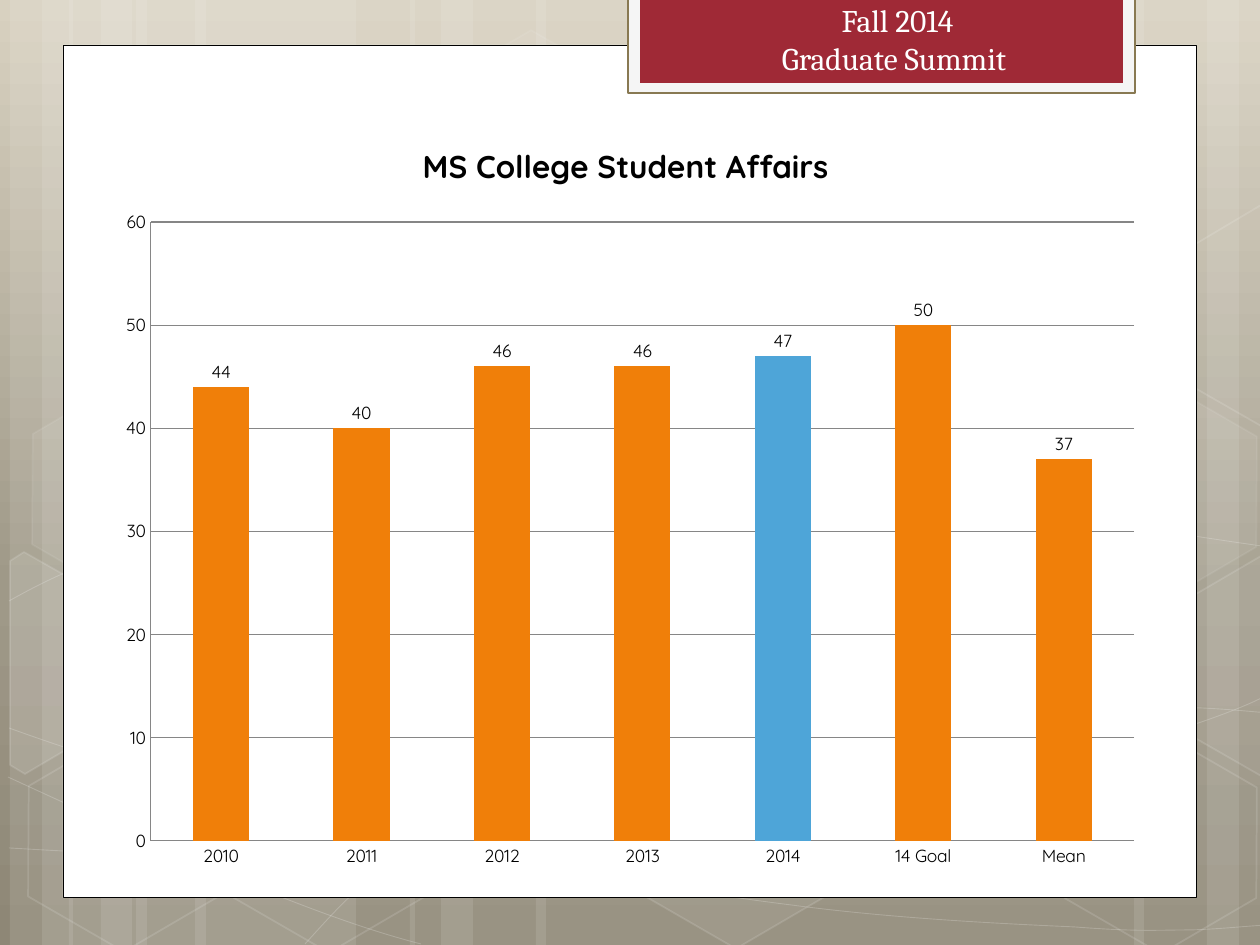
from copy import deepcopy
from typing import NamedTuple, Optional

from lxml import etree
from pptx import Presentation
from pptx import util as u
from pptx.chart import data
from pptx.dml.color import RGBColor
from pptx.enum import chart as ch
from pptx.enum import shapes, text
from pptx.oxml import ns

PX = 914400 / 126
WIDTH, HEIGHT = 1260, 945

WHITE = RGBColor(0xFF, 0xFF, 0xFF)
BLACK = RGBColor(0x00, 0x00, 0x00)
PLATE = RGBColor(0xF5, 0xF5, 0xF5)
PLATE_EDGE = RGBColor(0x88, 0x79, 0x52)
CRIMSON = RGBColor(0x9F, 0x29, 0x36)
ORANGE = RGBColor(0xF0, 0x7F, 0x09)
BLUE = RGBColor(0x4E, 0xA5, 0xD8)
GREY = RGBColor(0x86, 0x86, 0x86)
BACKDROP = [
    (0, RGBColor(0xD8, 0xD1, 0xC0)),
    (0.62, RGBColor(0x9F, 0x99, 0x88)),
    (1, RGBColor(0x8E, 0x87, 0x76)),
]


class Box(NamedTuple):
    left: int
    top: int
    width: int
    height: int


class Style(NamedTuple):
    fill: Optional[RGBColor] = None
    fill_alpha: int = 100
    line: Optional[RGBColor] = None
    line_pt: float = 1
    line_alpha: int = 100


class Hexagon(NamedTuple):
    left: int
    top: int
    fill_alpha: int
    line_alpha: int


class Shard(NamedTuple):
    points: list
    fill_alpha: int


STRIPES = [
    (136, 220), (10, 63), (42, 105), (195, 220), (69, 63), (101, 105),
    (924, 220), (1207, 63), (1134, 105), (536, 388), (410, 63), (441, 105),
]
CURVES = [
    [(9, 848), (77, 852), (145, 856), (239, 854), (334, 853), (451, 850), (577, 838),
     (703, 825), (882, 801), (998, 777), (1113, 753), (1231, 716), (1269, 694)],
    [(9, 601), (45, 581), (82, 562), (152, 543), (224, 524), (326, 499), (437, 488),
     (549, 478), (685, 478), (824, 488), (963, 498), (1193, 537), (1269, 547)],
    [(8, 777), (160, 847), (311, 916), (421, 944)],
    [(9, 728), (48, 742), (88, 756), (161, 776), (234, 795), (344, 827), (450, 848),
     (554, 869), (687, 892), (791, 905), (896, 919), (1008, 924), (1075, 927),
     (1140, 932), (1158, 930), (1191, 930), (1223, 929), (1246, 926), (1269, 925)],
    [(305, 944), (328, 919), (350, 893), (381, 871), (411, 848), (454, 823), (489, 805),
     (524, 788), (546, 780), (592, 767), (638, 754), (722, 737), (766, 728),
     (811, 719), (818, 719), (857, 717), (896, 713), (958, 709), (1000, 708),
     (1045, 707), (1116, 708), (1116, 708), (1144, 708), (1173, 708), (1201, 708),
     (1223, 709), (1245, 711), (1256, 712), (1268, 713), (1264, 712), (1268, 713)],
]
HEXAGONS = [
    Hexagon(421, 45, 4, 8),
    Hexagon(626, 742, 6, 12),
    Hexagon(14, 745, 0, 12),
    Hexagon(18, 393, 7, 8),
    Hexagon(219, 746, 0, 12),
    Hexagon(1051, 747, 0, 12),
    Hexagon(1051, 396, 7, 8),
]
SHARDS = [
    Shard([(10, 561), (24, 552), (121, 607), (120, 718), (25, 774), (10, 765)], 10),
    Shard([(1167, 611), (1261, 556), (1271, 562), (1271, 772), (1263, 777), (1167, 722)], 4),
    Shard([(1167, 261), (1261, 205), (1273, 212), (1271, 422), (1263, 427), (1167, 372)], 0),
]


def emu(px: float) -> int:
    return round(px * PX)


def place(box: Box) -> list:
    return [emu(length) for length in box]


def set_alpha(shape, fill_path: str, percent: int) -> None:
    if percent < 100:
        color = shape._element.spPr.xpath(f"{fill_path}/a:srgbClr")[0]
        etree.SubElement(color, ns.qn("a:alpha")).set("val", str(percent * 1000))


def apply_style(shape, style: Style) -> None:
    shape.shadow.inherit = False
    if style.fill is not None and style.fill_alpha:
        shape.fill.solid()
        shape.fill.fore_color.rgb = style.fill
        set_alpha(shape, "./a:solidFill", style.fill_alpha)
    else:
        shape.fill.background()
    if style.line is None:
        shape.line.fill.background()
    else:
        shape.line.color.rgb = style.line
        shape.line.width = u.Pt(style.line_pt)
        set_alpha(shape, "./a:ln/a:solidFill", style.line_alpha)


def add_rect(slide, box: Box, style: Style) -> None:
    rect = slide.shapes.add_shape(shapes.MSO_SHAPE.RECTANGLE, *place(box))
    apply_style(rect, style)


def add_hexagon(slide, spec_: Hexagon) -> None:
    box = Box(spec_.left, spec_.top, 220, 192)
    hexagon = slide.shapes.add_shape(shapes.MSO_SHAPE.HEXAGON, *place(box))
    hexagon.adjustments[0] = 0.285
    hexagon.rotation = 30
    apply_style(hexagon, Style(WHITE, spec_.fill_alpha, WHITE, 1, spec_.line_alpha))


def add_outline(slide, points: list, style: Style, close: bool):
    builder = slide.shapes.build_freeform(*points[0], scale=PX)
    builder.add_line_segments(points[1:], close=close)
    outline = builder.convert_to_shape()
    apply_style(outline, style)
    return outline


def add_curve(slide, points: list) -> None:
    curve = add_outline(slide, points, Style(line=WHITE, line_pt=0.5, line_alpha=20), False)
    segments = curve._element.spPr.xpath(".//a:lnTo")
    for first, second, third in zip(*[iter(segments)] * 3):
        first.tag = ns.qn("a:cubicBezTo")
        for segment in (second, third):
            first.append(segment[0])
            segment.getparent().remove(segment)


def add_text(slide, box: Box, lines: list, *, size: int, font: str, color: RGBColor) -> None:
    frame = slide.shapes.add_textbox(*place(box)).text_frame
    frame.word_wrap = True
    frame.auto_size = text.MSO_AUTO_SIZE.SHAPE_TO_FIT_TEXT
    for index, line in enumerate(lines):
        paragraph = frame.paragraphs[0] if index == 0 else frame.add_paragraph()
        paragraph.alignment = text.PP_ALIGN.CENTER
        run = paragraph.add_run()
        run.text = line
        run.font.size, run.font.name = u.Pt(size), font
        run.font.color.rgb = color


def paint_backdrop(slide) -> None:
    fill = slide.background.fill
    fill.gradient()
    fill.gradient_angle = 270
    stop_list = slide._element.xpath(".//a:gsLst")[0]
    stop_list.insert(1, deepcopy(stop_list[0]))
    for stop, (position, color) in zip(fill.gradient_stops, BACKDROP):
        stop.position = position
        stop.color.rgb = color


def add_enrollment_chart(slide, box: Box) -> None:
    enrollment = data.CategoryChartData()
    enrollment.categories = ["2010", "2011", "2012", "2013", "2014", "14 Goal", "Mean"]
    enrollment.add_series("Series 1", [44, 40, 46, 46, 47, 50, 37])
    chart = slide.shapes.add_chart(
        ch.XL_CHART_TYPE.COLUMN_CLUSTERED, *place(box), enrollment).chart
    chart.font.size, chart.font.name = u.Pt(10), "Quicksand"
    chart.font.color.rgb = BLACK
    chart.has_legend = False
    chart.has_title = True
    title = chart.chart_title.text_frame.paragraphs[0].add_run()
    title.text = "MS College Student Affairs "
    title.font.size, title.font.bold, title.font.name = u.Pt(18), True, "Quicksand"
    title.font.color.rgb = BLACK

    counts = chart.value_axis
    counts.minimum_scale, counts.maximum_scale, counts.major_unit = 0, 60, 10
    counts.has_major_gridlines = True
    for axis in (chart.category_axis, counts):
        axis.major_tick_mark = axis.minor_tick_mark = ch.XL_TICK_MARK.NONE
    for rule in (chart.category_axis.format, counts.format, counts.major_gridlines.format):
        rule.line.color.rgb = GREY
        rule.line.width = u.Pt(0.75)

    plot = chart.plots[0]
    plot.gap_width = 150
    plot.vary_by_categories = False
    students = plot.series[0]
    for bar, color in ((students, ORANGE), (students.points[4], BLUE)):
        bar.format.fill.solid()
        bar.format.fill.fore_color.rgb = color
    students.data_labels.show_value = True
    students.data_labels.position = ch.XL_LABEL_POSITION.OUTSIDE_END


def main() -> None:
    deck = Presentation()
    deck.slide_width, deck.slide_height = emu(WIDTH), emu(HEIGHT)
    slide = deck.slides.add_slide(deck.slide_layouts[6])
    paint_backdrop(slide)
    for left, width in STRIPES:
        add_rect(slide, Box(left, 0, width, HEIGHT), Style(WHITE, 10))
    for points in CURVES:
        add_curve(slide, points)
    for hexagon in HEXAGONS:
        add_hexagon(slide, hexagon)
    for shard in SHARDS:
        add_outline(slide, shard.points, Style(WHITE, shard.fill_alpha, WHITE, 1, 12), True)
    add_rect(slide, Box(63, 45, 1134, 853), Style(WHITE, line=BLACK, line_pt=0.5))
    add_rect(slide, Box(628, -2, 507, 95), Style(PLATE, line=PLATE_EDGE, line_pt=1.25))
    add_rect(slide, Box(640, -2, 483, 85), Style(CRIMSON))
    add_text(slide, Box(661, -5, 473, 89), ["Fall 2014", "Graduate Summit "],
             size=18, font="Cambria", color=WHITE)
    add_enrollment_chart(slide, Box(105, 116, 1050, 766))
    deck.save("out.pptx")


if __name__ == "__main__":
    main()
